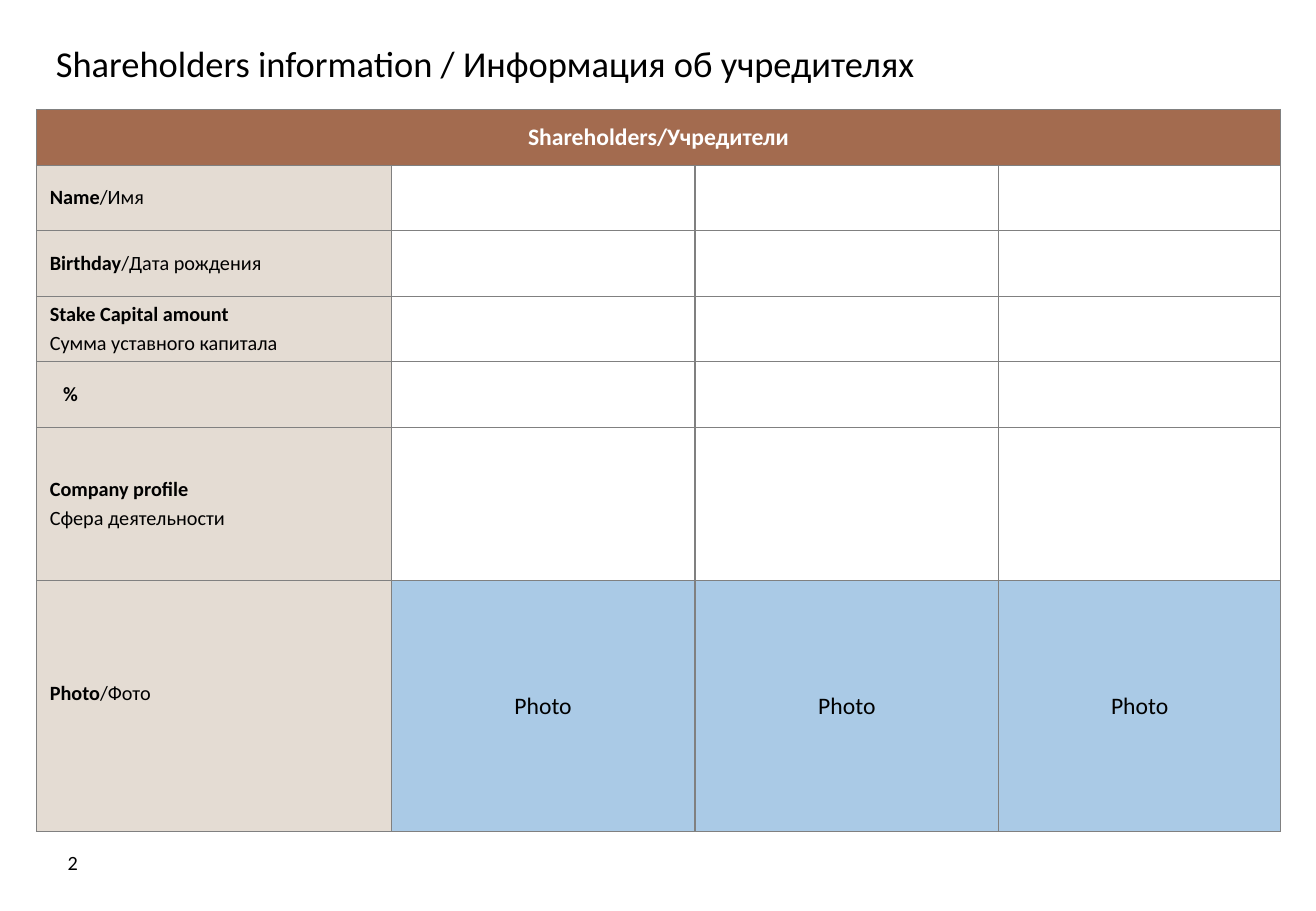
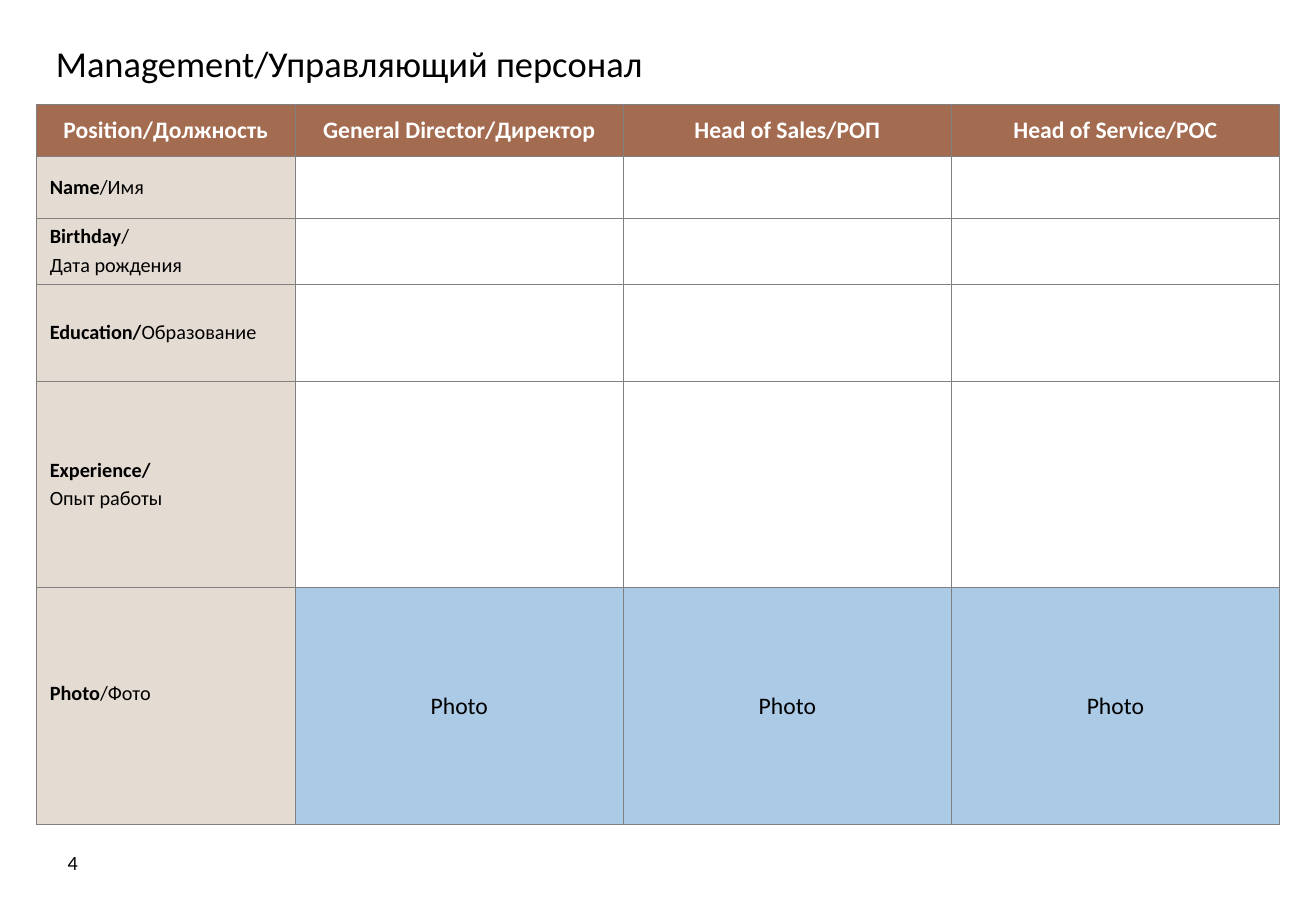
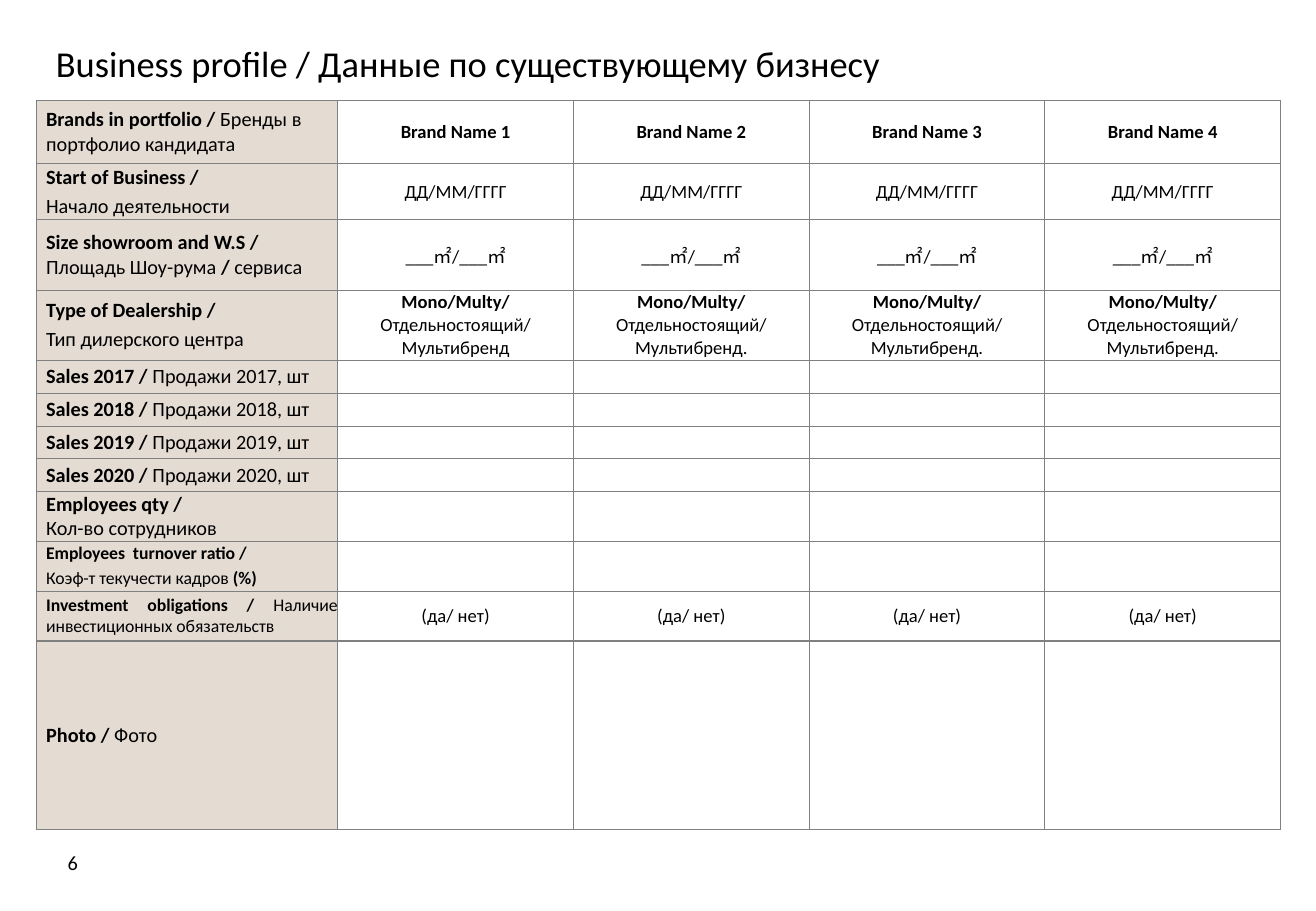
from lxml.etree import SubElement
from pptx import Presentation
from pptx.dml.color import RGBColor as RGB
from pptx.enum.text import MSO_ANCHOR as Anchor, MSO_AUTO_SIZE as Fit, PP_ALIGN as Align
from pptx.oxml.ns import qn
from pptx.util import Pt

PX = 9144  # one px is a hundredth of an inch
FONT = "Calibri"
BLACK = RGB(0x00, 0x00, 0x00)
WHITE = RGB(0xFF, 0xFF, 0xFF)
BROWN = RGB(0xA3, 0x6B, 0x4F)
SAND = RGB(0xE4, 0xDC, 0xD3)
BLUE = RGB(0xAA, 0xCA, 0xE6)
GREY = RGB(0x80, 0x80, 0x80)
PHOTO = dict(size=14, fill=BLUE)


def put(frame, text, size=12, color=BLACK, align=Align.LEFT, gap=0.2):
    """Write text: a line break starts a paragraph, *stars* mark bold."""
    frame.word_wrap = True
    for i, line in enumerate(text.split("\n")):
        para = frame.paragraphs[0] if i == 0 else frame.add_paragraph()
        para.alignment = align
        para.space_before = Pt(size * gap if i else 0)
        for j, part in enumerate(line.split("*")):
            if part:
                run = para.add_run()
                run.text = part
                font = run.font
                font.name, font.size, font.bold = FONT, Pt(size), j % 2 == 1
                font.color.rgb = color
        if not line:
            SubElement(para._p, qn("a:endParaRPr"), sz=str(size * 100))


def edge(cell):
    props = cell._tc.get_or_add_tcPr()
    for side in ("a:lnL", "a:lnR", "a:lnT", "a:lnB"):
        line = SubElement(props, qn(side), w=str(Pt(0.75)))
        fill = SubElement(line, qn("a:solidFill"))
        SubElement(fill, qn("a:srgbClr"), val=str(GREY))


def fill_cell(cell, text, fill=WHITE, pad=(11, 0, 11, 0), **form):
    edge(cell)
    cell.fill.solid()
    cell.fill.fore_color.rgb = fill
    cell.vertical_anchor = Anchor.MIDDLE
    (cell.margin_left, cell.margin_top,
     cell.margin_right, cell.margin_bottom) = [n * PX for n in pad]
    put(cell.text_frame, text, **form)


def head(cell, text):
    fill_cell(cell, text, fill=BROWN, size=14, color=WHITE, align=Align.CENTER)


def label(cell, text, pad=(11, 5, 11, 5), **form):
    fill_cell(cell, text, fill=SAND, pad=pad, **form)


def value(cell, text="", size=11, **form):
    fill_cell(cell, text, size=size, align=Align.CENTER, **form)


def add_grid(slide, top, cols, rows):
    grid = slide.shapes.add_table(len(rows), len(cols), 30 * PX, top * PX,
                                  sum(cols) * PX, sum(rows) * PX).table
    grid.first_row = grid.horz_banding = False
    for col, width in zip(grid.columns, cols):
        col.width = width * PX
    for row, height in zip(grid.rows, rows):
        row.height = height * PX
    return grid


def fill_body(grid, rows, start=0):
    """Each row holds a label, its format, the values and their format."""
    for r, (name, look, items, form) in enumerate(rows, start):
        label(grid.cell(r, 0), name, **look)
        for c in range(1, len(grid.columns)):
            value(grid.cell(r, c), items[c - 1] if items else "", **form)


def add_page(deck, title, number):
    slide = deck.slides.add_slide(deck.slide_layouts[5])
    name = slide.shapes.title
    name.left, name.top, name.width, name.height = [n * PX for n in (36, 29, 1001, 46)]
    page = slide.shapes.add_textbox(*[n * PX for n in (30, 690, 60, 40)])
    for shape, text, form in (
        (name, title, dict(size=21.6)),
        (page, str(number), dict(align=Align.CENTER)),
    ):
        frame = shape.text_frame
        frame.auto_size = Fit.NONE
        frame.vertical_anchor = Anchor.MIDDLE
        put(frame, text, **form)
    return slide


# Rows that the first two slides share
NAME_ROW = ("*Name*/Имя", {}, [], {})
PHOTO_ROW = ("*Photo*/Фото", dict(pad=(11, 5, 11, 26)), ["Photo"] * 3, PHOTO)


def add_owners(deck):
    slide = add_page(deck, "Shareholders information / Информация об учредителях", 2)
    grid = add_grid(slide, 90, [292, 250, 250, 232], [46] + [54] * 4 + [126, 207])
    # Header across all columns
    for c in range(4):
        head(grid.cell(0, c), "" if c else "*Shareholders/Учредители*")
    grid.cell(0, 0).merge(grid.cell(0, 3))
    fill_body(grid, [
        NAME_ROW,
        ("*Birthday*/Дата рождения", {}, [], {}),
        ("*Stake Capital amount*\nСумма уставного капитала", {}, [], {}),
        ("*%*", dict(pad=(22, 5, 11, 5)), [], {}),
        ("*Company profile*\nСфера деятельности", {}, [], {}),
        PHOTO_ROW,
    ], start=1)


def add_staff(deck):
    slide = add_page(deck, "Management/Управляющий персонал", 4)
    grid = add_grid(slide, 86, [213, 270, 270, 270], [43, 51, 54, 80, 170, 195])
    posts = ("Position/Должность", "General Director/Директор",
             "Head of Sales/РОП", "Head of Service/РОС")
    for c, post in enumerate(posts):
        head(grid.cell(0, c), f"*{post}*")
    fill_body(grid, [
        NAME_ROW,
        ("*Birthday*/\nДата рождения", {}, [], {}),
        ("*Education/*Образование", {}, [], {}),
        ("*Experience/*\nОпыт работы", {}, [], {}),
        PHOTO_ROW,
    ], start=1)


def add_profile(deck):
    slide = add_page(deck, "Business profile / Данные по существующему бизнесу", 6)
    grid = add_grid(slide, 83, [248] + [194] * 4,
                    [52, 46, 58, 58] + [27] * 4 + [41] * 3 + [155])
    tight = dict(pad=(8, 0, 0, 0))
    small = dict(tight, size=10.5, align=Align.JUSTIFY)
    kind = "*Mono/Multy/*Отдельностоящий/Мультибренд"
    sales = [(f"*Sales {year} /* Продажи {year}, шт", tight, [], {})
             for year in range(2017, 2021)]
    fill_body(grid, [
        ("*Brands in portfolio /* Бренды в портфолио кандидата",
         dict(pad=(8, 5, 11, 5)), [f"*Brand Name {n}*" for n in range(1, 5)], {}),
        ("*Start of Business /*\nНачало деятельности", tight, ["ДД/ММ/ГГГГ"] * 4, {}),
        ("*Size showroom and W.S / *Площадь Шоу-рума */* сервиса", tight,
         ["___㎡/___㎡"] * 4, {}),
        ("*Type of Dealership /*\nТип дилерского центра", tight,
         [kind] + [kind + "."] * 3, {}),
        *sales,
        ("*Employees qty /*\nКол-во сотрудников", dict(tight, gap=0), [], {}),
        ("*Employees  turnover ratio /*\nКоэф-т текучести кадров *(%)*", small, [], {}),
        ("*Investment obligations /* Наличие инвестиционных обязательств", small,
         ["(да/ нет)"] * 4, {}),
        ("*Photo /* Фото", tight, [], {}),
    ])


def main():
    deck = Presentation()
    deck.slide_width, deck.slide_height = 1083 * PX, 750 * PX
    add_owners(deck)
    add_staff(deck)
    add_profile(deck)
    deck.save("out.pptx")


if __name__ == "__main__":
    main()
